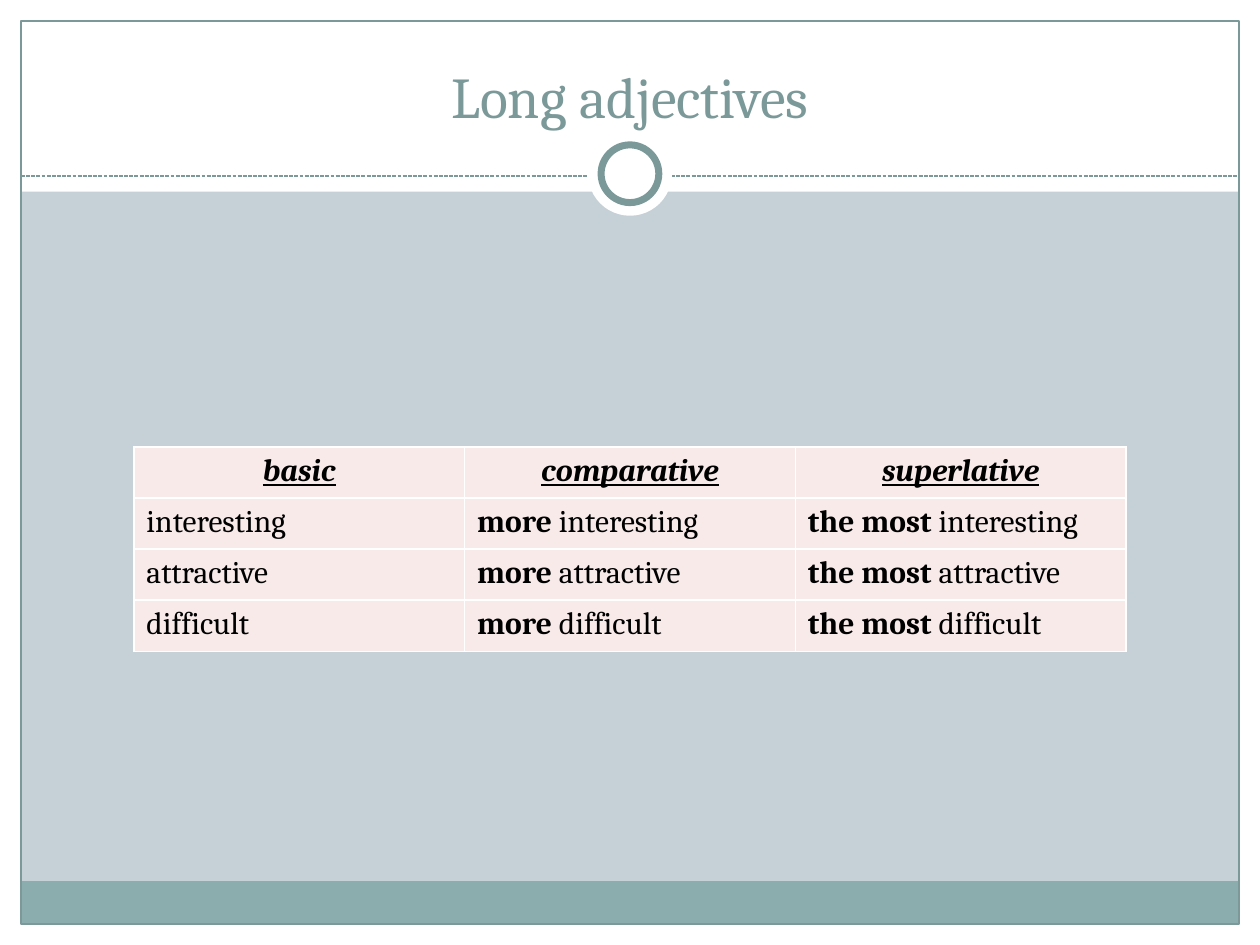
from lxml.etree import SubElement
from pptx import Presentation
from pptx.dml.color import RGBColor
from pptx.enum.dml import MSO_LINE
from pptx.enum.shapes import MSO_CONNECTOR, MSO_SHAPE
from pptx.enum.text import MSO_ANCHOR, MSO_AUTO_SIZE, PP_ALIGN
from pptx.oxml.ns import qn
from pptx.util import Pt

WIDTH, HEIGHT, MARGIN = 720, 540, 12
WHITE, BLACK, TEAL, BAND, BACKDROP, CELL = (
    "FFFFFF", "000000", "7C999A", "8CADAE", "C5D1D7", "F7EAE9")


def color(value):
    return RGBColor.from_string(value)


class SlideBuilder:
    """Holds the style and the current slide, and adds each kind of element."""

    font = "Cambria"

    def __init__(self, slide):
        self.slide = slide
        slide.background.fill.solid()
        slide.background.fill.fore_color.rgb = color(BACKDROP)

    def style(self, run, size, ink, bold=False, italic=False, underline=False):
        font = run.font
        font.name, font.size, font.color.rgb = self.font, Pt(size), color(ink)
        font.bold, font.italic, font.underline = bold, italic, underline

    def shape(self, left, top, width, height, fill=None, line=None, weight=0.75,
              preset=MSO_SHAPE.RECTANGLE):
        shape = self.slide.shapes.add_shape(
            preset, Pt(left), Pt(top), Pt(width), Pt(height))
        shape.shadow.inherit = False
        if fill:
            shape.fill.solid()
            shape.fill.fore_color.rgb = color(fill)
        else:
            shape.fill.background()
        if line:
            shape.line.color.rgb = color(line)
            shape.line.width = Pt(weight)
        else:
            shape.line.fill.background()

    def circle(self, center_x, center_y, diameter, **look):
        self.shape(center_x - diameter / 2, center_y - diameter / 2,
                   diameter, diameter, preset=MSO_SHAPE.OVAL, **look)

    def dashed_rule(self, left, right, y):
        rule = self.slide.shapes.add_connector(
            MSO_CONNECTOR.STRAIGHT, Pt(left), Pt(y), Pt(right), Pt(y))
        rule.line.color.rgb = color(TEAL)
        rule.line.width = Pt(0.75)
        rule.line.dash_style = MSO_LINE.SQUARE_DOT
        SubElement(rule._element.spPr, qn("a:effectLst"))

    def title(self, text, left, top, width, height):
        title = self.slide.shapes.title
        title.left, title.top = Pt(left), Pt(top)
        title.width, title.height = Pt(width), Pt(height)
        frame = title.text_frame
        frame.text = text
        frame.word_wrap = True
        frame.auto_size = MSO_AUTO_SIZE.NONE
        frame.vertical_anchor = MSO_ANCHOR.BOTTOM
        frame.paragraphs[0].alignment = PP_ALIGN.CENTER
        self.style(frame.paragraphs[0].runs[0], 33, TEAL)
        self.slide.shapes._spTree.append(title._element)

    def cell_borders(self, cell):
        properties = cell._tc.get_or_add_tcPr()
        for position, side in enumerate(("lnL", "lnR", "lnT", "lnB")):
            border = SubElement(properties, qn(f"a:{side}"), w=str(Pt(1)))
            fill = SubElement(border, qn("a:solidFill"))
            SubElement(fill, qn("a:srgbClr"), val=WHITE)
            properties.insert(position, border)

    def comparison_table(self, headings, prefixes, adjectives,
                         left, top, width, row_height):
        rows = len(adjectives) + 1
        table = self.slide.shapes.add_table(
            rows, len(headings), Pt(left), Pt(top),
            Pt(width), Pt(rows * row_height)).table
        for cell in table.iter_cells():
            cell.fill.solid()
            cell.fill.fore_color.rgb = color(CELL)
            self.cell_borders(cell)
        for column, heading in enumerate(headings):
            paragraph = table.cell(0, column).text_frame.paragraphs[0]
            paragraph.text = heading
            paragraph.alignment = PP_ALIGN.CENTER
            self.style(paragraph.runs[0], 18, BLACK, True, True, True)
        for row, adjective in enumerate(adjectives, start=1):
            for column, prefix in enumerate(prefixes):
                paragraph = table.cell(row, column).text_frame.paragraphs[0]
                for text, bold in ((prefix, True), (adjective, False)):
                    if text:
                        run = paragraph.add_run()
                        run.text = text
                        self.style(run, 18, BLACK, bold)


def main():
    presentation = Presentation()
    presentation.slide_width, presentation.slide_height = Pt(WIDTH), Pt(HEIGHT)
    builder = SlideBuilder(
        presentation.slides.add_slide(presentation.slide_layouts[5]))

    inner_width, inner_height = WIDTH - 2 * MARGIN, HEIGHT - 2 * MARGIN
    builder.shape(0, HEIGHT - MARGIN, WIDTH, MARGIN, fill=WHITE)
    builder.shape(0, 0, WIDTH, 109.5, fill=WHITE)
    for left in (0, WIDTH - MARGIN):
        builder.shape(left, 0, MARGIN, HEIGHT, fill=WHITE)
    builder.shape(MARGIN, 503.5, inner_width, 24.5, fill=BAND)
    builder.shape(MARGIN, MARGIN, inner_width, inner_height, line=TEAL)
    builder.dashed_rule(MARGIN, WIDTH - MARGIN, 100.6)
    builder.circle(WIDTH / 2, 99.3, 48, fill=WHITE)
    builder.circle(WIDTH / 2, 99.3, 33, fill=WHITE, line=TEAL, weight=4)

    builder.title("Long adjectives", 24, 18, WIDTH - 48, 60)
    builder.comparison_table(
        ("basic", "comparative", "superlative"),
        ("", "more ", "the most "),
        ("interesting", "attractive", "difficult"),
        left=76.5, top=255.4, width=567, row_height=29.2)
    presentation.save("out.pptx")


if __name__ == "__main__":
    main()
